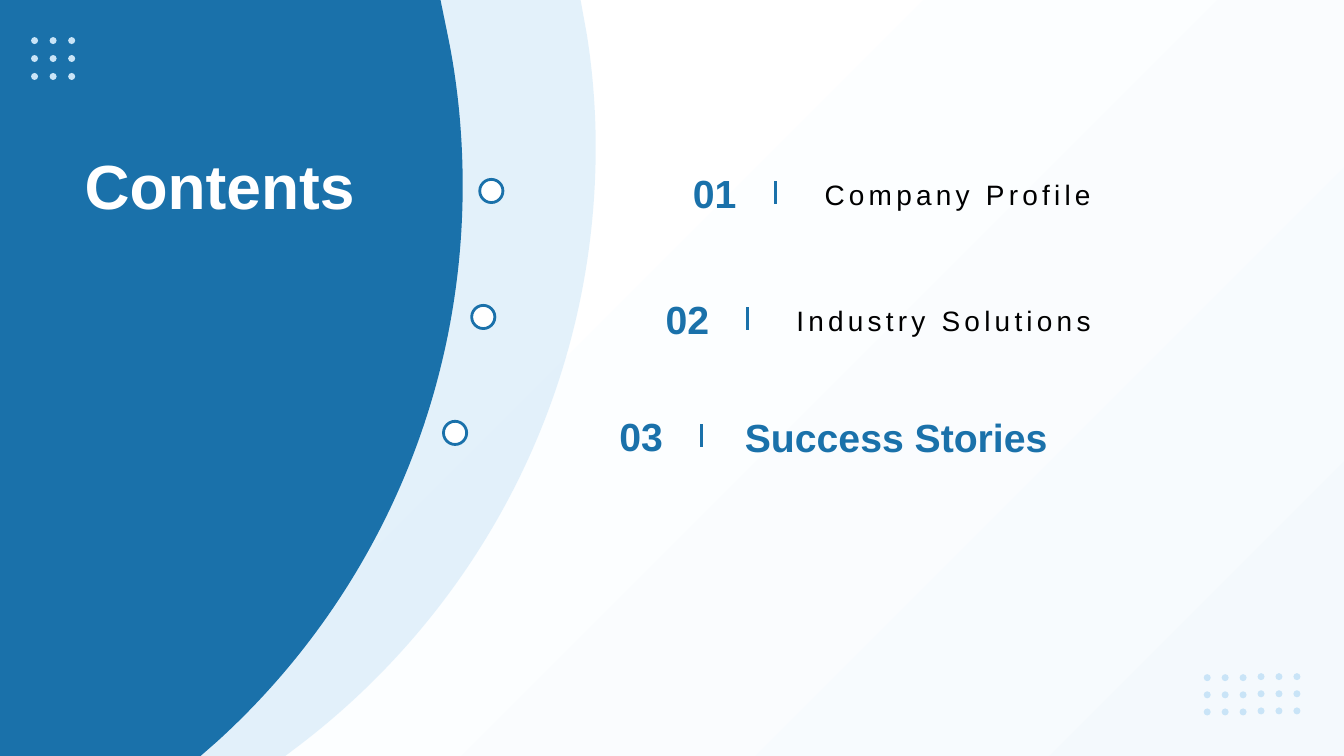
from lxml.etree import SubElement
from pptx import Presentation
from pptx.dml.color import RGBColor
from pptx.enum.shapes import MSO_CONNECTOR as Connector, MSO_SHAPE as Shape
from pptx.enum.text import MSO_ANCHOR as Anchor, PP_ALIGN as Align
from pptx.oxml.ns import qn
from pptx.util import Inches, Pt

CELL = Inches(0.01)
COLUMNS, ROWS = 4000 / 3, 750
BLUE, PALE, WHITE, BLACK = "1A71AA", "C9E4F7", "FFFFFF", "000000"
NUMBER = {"size": Pt(28), "bold": True, "name": "Arial"}
TOPIC = {"size": Pt(20), "bold": False, "name": "Arial"}
TITLE = {"size": Pt(44.5), "bold": True, "name": "Arial"}


def cells(*counts):
    """Turn counts of grid cells into slide lengths."""
    return [round(count * CELL) for count in counts]


def color(hex_value):
    """Return the colour of a hex string."""
    return RGBColor.from_string(hex_value)


def paint(shape, fill, line=None):
    """Give a shape a flat fill and an optional outline."""
    shape.shadow.inherit = False
    shape.fill.solid()
    shape.fill.fore_color.rgb = color(fill)
    if line:
        shape.line.color.rgb = color(line)
        shape.line.width = Pt(2)
    else:
        shape.line.fill.background()


def add_backdrop(slide):
    """Cover the slide with a diagonal gradient."""
    backdrop = slide.shapes.add_shape(Shape.RECTANGLE, 0, 0, *cells(COLUMNS, ROWS))
    backdrop.shadow.inherit = False
    backdrop.line.fill.background()
    backdrop.fill.gradient()
    backdrop.fill.gradient_angle = 315
    tones = ((0.3, WHITE), (1, "F4F9FD"))
    for stop, (position, tone) in zip(backdrop.fill.gradient_stops, tones):
        stop.position = position
        stop.color.rgb = color(tone)


def bend(outline, segments):
    """Merge the three steps of each curved segment into one cubic curve."""
    steps = iter(list(outline._element.iter(qn("a:lnTo"))))
    for segment in segments:
        parts = [next(steps) for _ in segment]
        if len(parts) == 3:
            curve = SubElement(parts[0].getparent(), qn("a:cubicBezTo"))
            parts[0].addprevious(curve)
            for part in parts:
                curve.append(part[0])
                part.getparent().remove(part)


def add_outline(slide, contours, fill):
    """Draw closed contours of lines (one point) and curves (three points)."""
    builder = slide.shapes.build_freeform(*cells(*contours[0][0]))
    for index, (start, segments) in enumerate(contours):
        if index:
            builder.move_to(*cells(*start))
        points = [cells(*point) for segment in segments for point in segment]
        builder.add_line_segments(points, close=True)
    outline = builder.convert_to_shape()
    bend(outline, [segment for _, segments in contours for segment in segments])
    paint(outline, fill)
    return outline


def add_panel(slide, top_edge, arc_start, upper, lower, bottom_edge, fill):
    """Draw a left panel whose right side is a round arc."""
    segments = [[(top_edge, 0)], [arc_start], upper, lower, [(bottom_edge, ROWS)], [(0, ROWS)]]
    return add_outline(slide, [((0, 0), segments)], fill)


def dot(x, y, radius=3.5):
    """Return the contour of a dot as four curves."""
    near, far = 0.55 * radius, radius
    turns = ((1, 0), (0, 1), (-1, 0), (0, -1))
    segments = [
        [(x + far * a - near * b, y + far * b + near * a),
         (x + near * a - far * b, y + near * b + far * a),
         (x - far * b, y + far * a)] for a, b in turns
    ]
    return (x + far, y), segments


def add_dots(slide, left, top, columns, pitch_x, pitch_y):
    """Draw three rows of dots, each block of three columns a cell higher."""
    contours = [dot(left + column * pitch_x, top + row * pitch_y - column // 3)
                for row in range(3) for column in range(columns)]
    add_outline(slide, contours, PALE)


def add_text(slide, box, words, style, tone, align=Align.LEFT, anchor=Anchor.MIDDLE,
             wrap=True, line_spacing=None, tracking=None):
    """Place one styled line of text."""
    frame = slide.shapes.add_textbox(*cells(*box)).text_frame
    layout = {"margin_left": 0, "margin_right": 0, "margin_top": 0, "margin_bottom": 0,
              "vertical_anchor": anchor, "word_wrap": wrap}
    for name, value in layout.items():
        setattr(frame, name, value)
    paragraph = frame.paragraphs[0]
    paragraph.alignment = align
    paragraph.line_spacing = line_spacing
    run = paragraph.add_run()
    run.text = words
    for name, value in style.items():
        setattr(run.font, name, value)
    run.font.color.rgb = color(tone)
    if tracking:
        run.font._element.set("spc", str(tracking))


def add_bar(slide, column, row):
    """Draw the short upright bar between number and topic."""
    bar = slide.shapes.add_connector(
        Connector.STRAIGHT, *cells(column, row, column, row + 22.5))
    bar.line.color.rgb = color(BLUE)
    bar.line.width = Pt(2)
    SubElement(bar._element.spPr, qn("a:effectLst"))


def add_entry(slide, number, topic, ring_spot, left, top, topic_box, current):
    """Draw one line of the contents with its ring."""
    ring = slide.shapes.add_shape(Shape.OVAL, *cells(*ring_spot, 23, 23))
    paint(ring, WHITE, BLUE)
    add_text(slide, (left, top, 90, 76), number, NUMBER, BLUE, Align.CENTER, wrap=False)
    add_bar(slide, left + 105, top + 27)
    if current:
        add_text(slide, topic_box, topic, NUMBER, BLUE)
    else:
        add_text(slide, topic_box, topic, TOPIC, BLACK, line_spacing=1.1, tracking=300)


def main():
    """Build the contents slide."""
    deck = Presentation()
    deck.slide_width, deck.slide_height = cells(COLUMNS, ROWS)
    slide = deck.slides.add_slide(deck.slide_layouts[6])
    add_backdrop(slide)
    halo = add_panel(slide, 576, (582, 33), [(588, 70), (591, 108), (591, 146)],
                     [(591, 391), (473, 608), (291, 744)], 283, PALE)
    halo_color = halo._element.spPr.find(qn("a:solidFill"))[0]
    SubElement(halo_color, qn("a:alpha")).set("val", "50000")
    add_panel(slide, 437, (444, 34), [(454, 82), (459, 133), (459, 184)],
              [(459, 403), (365, 600), (215, 736)], 199, BLUE)
    add_dots(slide, 34.3, 40.3, 3, 18.4, 17.8)
    add_dots(slide, 1197.7, 672.3, 6, 17.8, 17)
    add_text(slide, (58, 102, 320, 118), "Contents", TITLE, WHITE, Align.CENTER, Anchor.BOTTOM)
    entries = (
        ("01", "Company Profile", (476, 178), 664, 153, (818, 153, 448, 76), False),
        ("02", "Industry Solutions", (468, 303), 637, 278, (790, 278, 501, 76), False),
        ("03", "Success Stories", (440, 418), 591, 394, (739, 395, 448, 76), True),
    )
    for entry in entries:
        add_entry(slide, *entry)
    deck.save("out.pptx")


if __name__ == "__main__":
    main()
